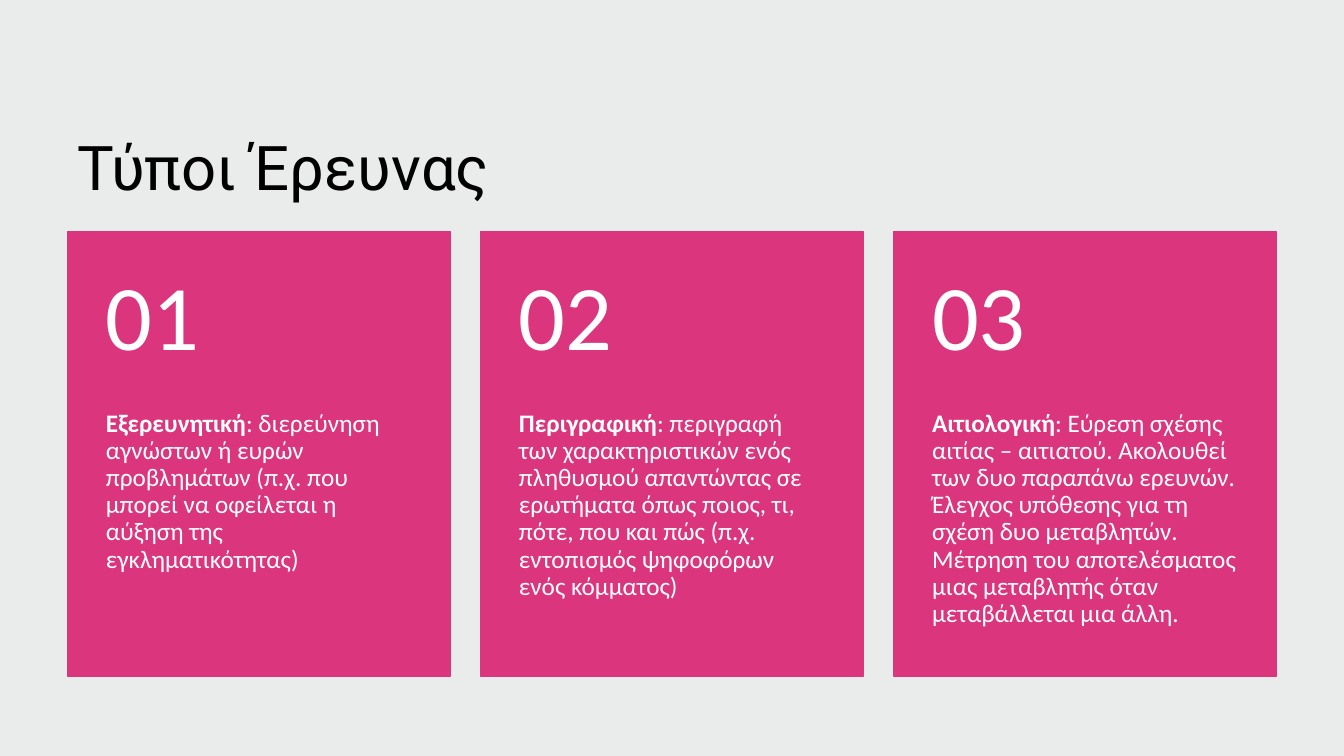
from pptx import Presentation
from pptx.dml.color import RGBColor
from pptx.enum.shapes import MSO_SHAPE
from pptx.enum.text import MSO_ANCHOR
from pptx.util import Cm, Pt

RECT = MSO_SHAPE.RECTANGLE
TOP, MIDDLE, BOTTOM = MSO_ANCHOR.TOP, MSO_ANCHOR.MIDDLE, MSO_ANCHOR.BOTTOM

COLORS = {"background": "E9ECEB", "card": "DB357E", "title": "000000", "text": "FFFFFF"}

TITLE_FONT = {"name": "Roboto", "size": Pt(44)}
NUMBER_FONT = {"name": "Calibri", "size": Pt(66)}
BODY_FONT = {"name": "Calibri", "size": Pt(18)}

LEFT, CARD_TOP = 1.7, 5.84
CARD_WIDTH, CARD_HEIGHT, CARD_PITCH = 9.65, 11.2, 10.41
NUMBER_HEIGHT = 4.5

RESEARCH_TYPES = [
    ("Εξερευνητική", ": διερεύνηση αγνώστων ή ευρών προβλημάτων (π.χ. που μπορεί "
     "να οφείλεται η αύξηση της εγκληματικότητας)"),
    ("Περιγραφική", ": περιγραφή των χαρακτηριστικών ενός πληθυσμού απαντώντας σε "
     "ερωτήματα όπως ποιος, τι, πότε, που και πώς (π.χ. εντοπισμός ψηφοφόρων ενός "
     "κόμματος)"),
    ("Αιτιολογική", ": Εύρεση σχέσης αιτίας – αιτιατού. Ακολουθεί των δυο παραπάνω "
     "ερευνών. Έλεγχος υπόθεσης για τη σχέση δυο μεταβλητών. Μέτρηση του "
     "αποτελέσματος μιας μεταβλητής όταν μεταβάλλεται μια άλλη."),
]


def rgb(name):
    return RGBColor.from_string(COLORS[name])


def add_text(s, box, runs, font, color, anchor, insets, line_spacing=1.0):
    """Add a one-paragraph text box; runs are (text, bold) pairs, insets left to bottom."""
    tf = s.shapes.add_textbox(*map(Cm, box)).text_frame
    tf.word_wrap = True
    tf.vertical_anchor = anchor
    for side, inset in zip(("left", "top", "right", "bottom"), insets):
        setattr(tf, f"margin_{side}", Cm(inset))
    p = tf.paragraphs[0]
    p.line_spacing = line_spacing
    for text, bold in runs:
        r = p.add_run()
        r.text = text
        for key, value in {**font, "bold": bold}.items():
            setattr(r.font, key, value)
        r.font.color.rgb = rgb(color)


def add_card(s, index, heading, description):
    left = LEFT + index * CARD_PITCH
    sp = s.shapes.add_shape(RECT, Cm(left), Cm(CARD_TOP), Cm(CARD_WIDTH), Cm(CARD_HEIGHT))
    sp.shadow.inherit = False
    sp.fill.solid()
    sp.fill.fore_color.rgb = rgb("card")
    sp.line.color.rgb = rgb("card")
    sp.line.width = Pt(1)

    body_box = (left, CARD_TOP + NUMBER_HEIGHT, CARD_WIDTH, CARD_HEIGHT - NUMBER_HEIGHT)
    add_text(s, body_box, [(heading, True), (description, False)], BODY_FONT, "text",
             TOP, (0.97, 0, 0.97, 0.91), 0.9)
    number_box = (left, CARD_TOP, CARD_WIDTH, NUMBER_HEIGHT)
    add_text(s, number_box, [(f"{index + 1:02}", False)], NUMBER_FONT, "text",
             MIDDLE, (0.97, 0.46, 0.97, 0.46), 0.9)


def main():
    prs = Presentation()
    prs.slide_width, prs.slide_height = Cm(33.87), Cm(19.05)
    s = prs.slides.add_slide(prs.slide_layouts[6])
    s.background.fill.solid()
    s.background.fill.fore_color.rgb = rgb("background")

    add_text(s, (LEFT, 1.55, 30.48, 3.68), [("Τύποι Έρευνας", False)], TITLE_FONT,
             "title", BOTTOM, (0.25, 0.13, 0.25, 0.13))
    for index, (heading, description) in enumerate(RESEARCH_TYPES):
        add_card(s, index, heading, description)
    prs.save("out.pptx")


if __name__ == "__main__":
    main()
